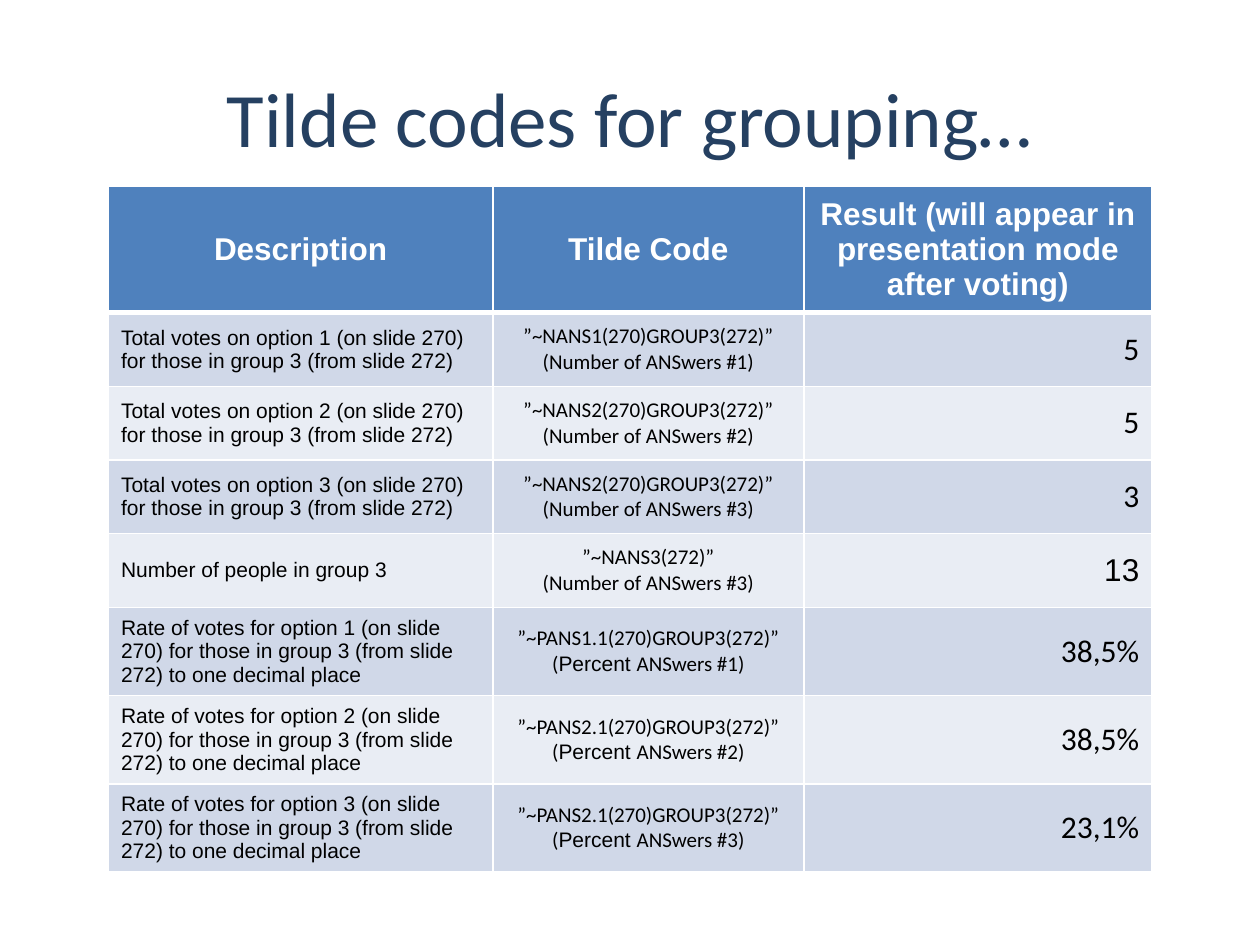
from dataclasses import dataclass

from lxml import etree
from pptx import Presentation
from pptx import util as u
from pptx.dml import color
from pptx.enum import text
from pptx.oxml import ns

Pt = u.Pt
LEFT, CENTER, RIGHT = text.PP_ALIGN.LEFT, text.PP_ALIGN.CENTER, text.PP_ALIGN.RIGHT


@dataclass(frozen=True)
class Theme:
    title: str = "254061"
    header: str = "4F81BD"
    bands: tuple = ("D0D8E8", "E9EDF4")
    white: str = "FFFFFF"
    black: str = "000000"
    sans: str = "Arial"
    humanist: str = "Calibri"
    title_size: float = 44
    large: float = 18
    small: float = 12
    rule: float = 1
    heavy_rule: float = 3


THEME = Theme()

HEADINGS = ("Description", "Tilde Code",
            "Result (will appear in presentation mode after voting)")
COLUMN_WIDTHS = (219.6, 177.8, 198.8)
HEADER_HEIGHT, COUNT_HEIGHT, RATE_HEIGHT = 68, 42.1, 47.5

SCOPE = "(on slide 270) for those in group 3 (from slide 272)"
COUNTS = [("NANS1", "5"), ("NANS2", "5"), ("NANS2", "3")]
RATES = [("PANS1.1", "38,5%"), ("PANS2.1", "38,5%"), ("PANS2.1", "23,1%")]


def write(frame, content, size, ink, font, align=LEFT, bold=False):
    """Each line is a string, or a list of (words, font) pairs."""
    frame.word_wrap = True
    frame.vertical_anchor = text.MSO_ANCHOR.MIDDLE
    lines = [content] if isinstance(content, str) else content
    for index, line in enumerate(lines):
        para = frame.paragraphs[0] if index == 0 else frame.add_paragraph()
        para.alignment = align
        pieces = [(line, font)] if isinstance(line, str) else line
        for words, face in pieces:
            span = para.add_run()
            span.text = words
            span.font.name = face
            span.font.size = Pt(size)
            span.font.bold = bold
            span.font.color.rgb = color.RGBColor.from_string(ink)


def paint(cell, fill, top, bottom):
    """Fill a cell and rule its four sides in white."""
    cell.fill.solid()
    cell.fill.fore_color.rgb = color.RGBColor.from_string(fill)
    sides = (("L", THEME.rule), ("R", THEME.rule), ("T", top), ("B", bottom))
    properties = cell._tc.get_or_add_tcPr()
    for index, (side, width) in enumerate(sides):
        line = etree.Element(ns.qn("a:ln" + side), w=str(Pt(width)))
        solid = etree.SubElement(line, ns.qn("a:solidFill"))
        etree.SubElement(solid, ns.qn("a:srgbClr"), val=THEME.white)
        properties.insert(index, line)


def table_rows():
    """Return (description, code lines, result, result font, height) rows."""
    rows = []
    for option, (code, result) in enumerate(COUNTS, 1):
        rows.append((f"Total votes on option {option} {SCOPE}",
                     [f"”~{code}(270)GROUP3(272)”", f"(Number of ANSwers #{option})"],
                     result, THEME.humanist, COUNT_HEIGHT))
    rows.append(("Number of people in group 3",
                 ["”~NANS3(272)”", "(Number of ANSwers #3)"],
                 "13", THEME.sans, COUNT_HEIGHT))
    for option, (code, result) in enumerate(RATES, 1):
        meaning = [("(", THEME.humanist), ("Percent ", THEME.sans),
                   (f"ANSwers #{option})", THEME.humanist)]
        rows.append((f"Rate of votes for option {option} {SCOPE} to one decimal place",
                     [f"”~{code}(270)GROUP3(272)”", meaning],
                     result, THEME.humanist, RATE_HEIGHT))
    return rows


def add_title(page, left, top, width, height):
    box = page.shapes.add_textbox(Pt(left), Pt(top), Pt(width), Pt(height))
    write(box.text_frame, "Tilde codes for grouping…", THEME.title_size,
          THEME.title, THEME.humanist, CENTER)


def add_code_table(page, left, top):
    rows = table_rows()
    heights = [HEADER_HEIGHT] + [row[-1] for row in rows]
    table = page.shapes.add_table(
        len(heights), len(COLUMN_WIDTHS), Pt(left), Pt(top),
        Pt(sum(COLUMN_WIDTHS)), Pt(sum(heights))).table
    table.horz_banding = False
    for column, width in zip(table.columns, COLUMN_WIDTHS):
        column.width = Pt(width)
    for row, height in zip(table.rows, heights):
        row.height = Pt(height)

    # Header row
    for index, heading in enumerate(HEADINGS):
        cell = table.cell(0, index)
        paint(cell, THEME.header, THEME.rule, THEME.heavy_rule)
        write_cell(cell, heading, THEME.large, THEME.white, THEME.sans, CENTER, True)

    # Body rows
    for number, (description, code, result, result_font, _) in enumerate(rows, 1):
        formats = ((description, THEME.small, THEME.sans, LEFT),
                   (code, THEME.small, THEME.humanist, CENTER),
                   (result, THEME.large, result_font, RIGHT))
        above = THEME.heavy_rule if number == 1 else THEME.rule
        for index, (content, size, font, align) in enumerate(formats):
            cell = table.cell(number, index)
            paint(cell, THEME.bands[(number - 1) % 2], above, THEME.rule)
            write_cell(cell, content, size, THEME.black, font, align)


def write_cell(cell, *content_and_format):
    write(cell.text_frame, *content_and_format)
    cell.vertical_anchor = text.MSO_ANCHOR.MIDDLE


def main():
    deck = Presentation()
    deck.slide_width, deck.slide_height = Pt(720), Pt(540)
    page = deck.slides.add_slide(deck.slide_layouts[6])
    add_title(page, 36, 21.6, 648, 90)
    add_code_table(page, 62, 106.6)
    deck.save("out.pptx")


if __name__ == "__main__":
    main()
